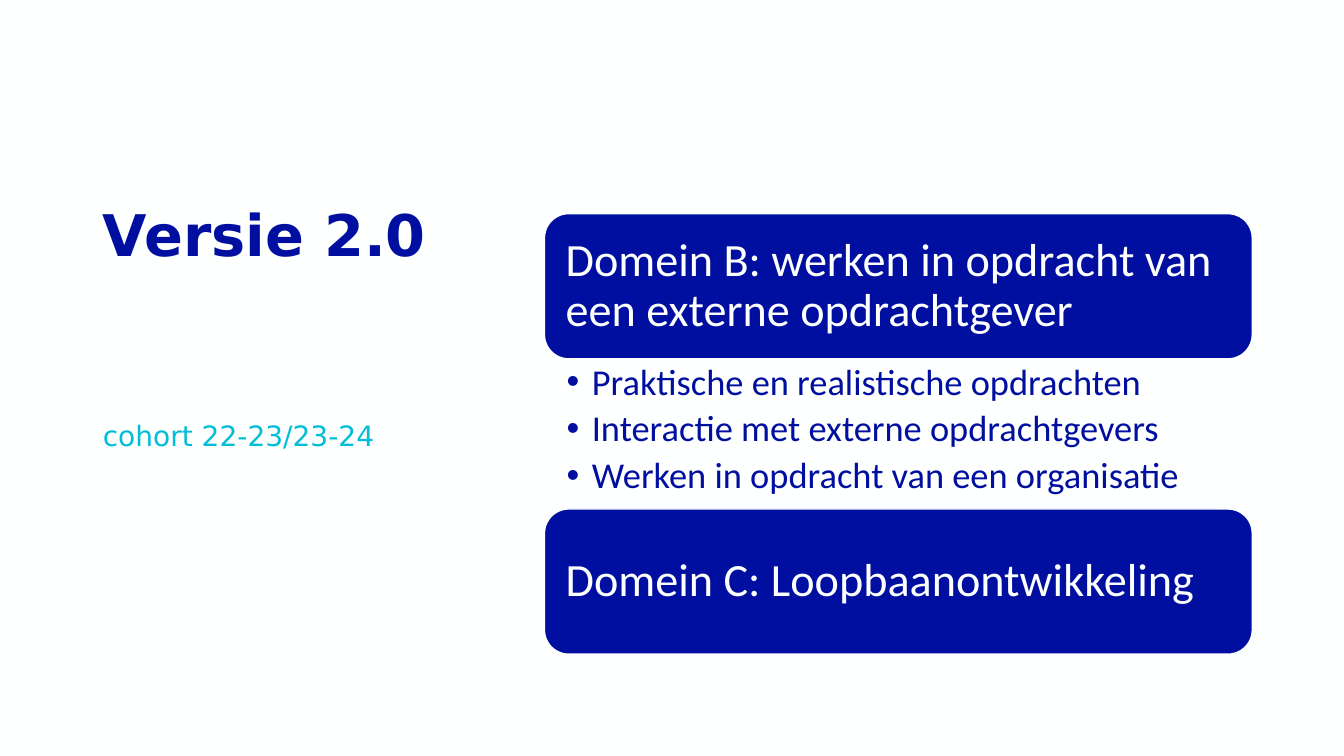
from lxml.etree import SubElement
from pptx import Presentation
from pptx.dml.color import RGBColor
from pptx.enum.shapes import MSO_SHAPE
from pptx.enum.text import MSO_ANCHOR, MSO_AUTO_SIZE, PP_ALIGN
from pptx.oxml.ns import qn
from pptx.util import Inches, Pt

TITLE = "Versie 2.0"
COHORT = "cohort 22-23/23-24"
CARDS = ["Domein B: werken in opdracht van een externe opdrachtgever",
         "Domein C: Loopbaanontwikkeling"]
TASKS = ["Praktische en realistische opdrachten",
         "Interactie met externe opdrachtgevers",
         "Werken in opdracht van een organisatie"]
COLORS = {"navy": "000FA0", "cyan": "00BED7", "white": "FEFFFF"}
HEAD, BODY = "DejaVu Sans", "Calibri"

# Two columns; the right one stacks card, list, card
LEFT, LEFT_W = 0.92, 4.31
RIGHT, RIGHT_W = 5.4, 7.02
TOP, CARD_H, LIST_H = 2.12, 1.44, 1.49


def color(name):
    return RGBColor.from_string(COLORS[name])


def place(shape, x, y, w, h):
    shape.left, shape.top, shape.width, shape.height = map(Inches, (x, y, w, h))


def write(shape, lines, font, size, hue, bold=False, after=0, bullet=False,
          pads=(0.1, 0.05, 0.1, 0.05), anchor=MSO_ANCHOR.TOP):
    frame = shape.text_frame
    frame.word_wrap = True
    frame.auto_size = MSO_AUTO_SIZE.NONE
    frame.vertical_anchor = anchor
    (frame.margin_left, frame.margin_top,
     frame.margin_right, frame.margin_bottom) = map(Inches, pads)
    for i, line in enumerate(lines):
        par = frame.add_paragraph() if i else frame.paragraphs[0]
        props = par._p.get_or_add_pPr()
        indent = Inches(0.25) if bullet else 0
        props.set("marL", str(indent))
        props.set("indent", str(-indent))
        if bullet:
            SubElement(props, qn("a:buChar")).set("char", "•")
        else:
            SubElement(props, qn("a:buNone"))
        par.alignment = PP_ALIGN.LEFT
        par.line_spacing = 0.9
        par.space_before, par.space_after = Pt(0), Pt(after)
        run = par.add_run()
        run.text = line
        run.font.name, run.font.size, run.font.bold = font, Pt(size), bold
        run.font.color.rgb = color(hue)


def main():
    deck = Presentation()
    deck.slide_width, deck.slide_height = Inches(13.33), Inches(7.5)
    slide = deck.slides.add_slide(deck.slide_layouts[3])
    slide.background.fill.solid()
    slide.background.fill.fore_color.rgb = color("white")
    title, cohort, tasks = slide.placeholders

    place(title, LEFT, 2, LEFT_W, 2.02)
    write(title, [TITLE], HEAD, 41, "navy", bold=True)
    place(cohort, LEFT, 4.14, LEFT_W, 2.37)
    write(cohort, [COHORT], HEAD, 20, "cyan")
    place(tasks, RIGHT, TOP + CARD_H, RIGHT_W, LIST_H)
    write(tasks, TASKS, BODY, 26, "navy", after=5.2, bullet=True,
          pads=(0.22, 0.05, 0.26, 0.05))

    for i, text in enumerate(CARDS):
        y = TOP + i * (CARD_H + LIST_H)
        card = slide.shapes.add_shape(
            MSO_SHAPE.ROUNDED_RECTANGLE,
            *map(Inches, (RIGHT, y, RIGHT_W, CARD_H)))
        card.shadow.inherit = False
        card.fill.solid()
        card.fill.fore_color.rgb = color("navy")
        card.line.color.rgb = color("white")
        card.line.width = Pt(1)
        # The rounded corners add their own 0.07 inch to the padding
        write(card, [text], BODY, 33, "white", pads=(0.14,) * 4,
              anchor=MSO_ANCHOR.MIDDLE)

    deck.save("out.pptx")


if __name__ == "__main__":
    main()
